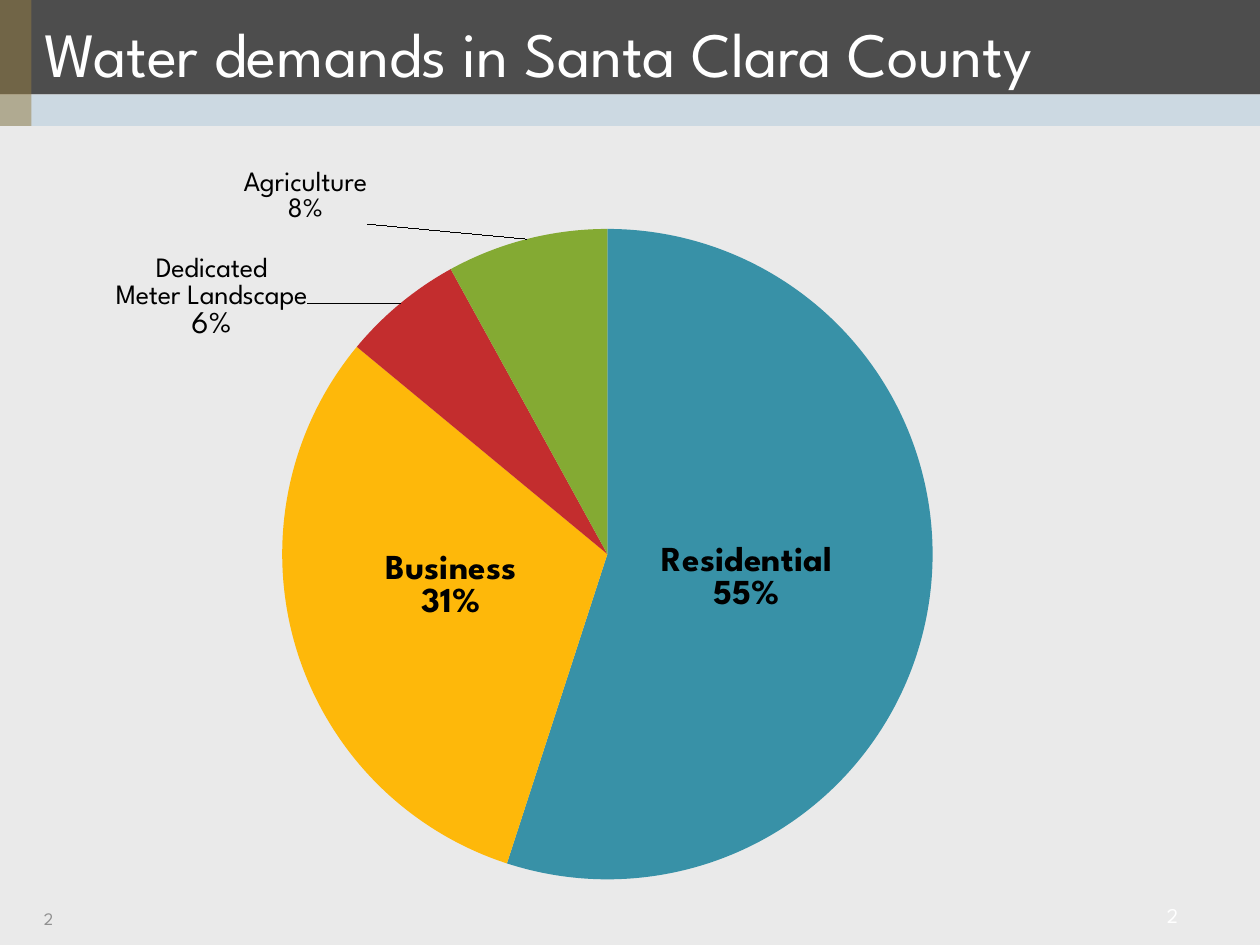
from lxml.etree import SubElement
from pptx import Presentation
from pptx.chart.data import CategoryChartData
from pptx.dml.color import RGBColor
from pptx.enum.chart import XL_CHART_TYPE, XL_LABEL_POSITION
from pptx.enum.shapes import MSO_SHAPE
from pptx.enum.text import MSO_ANCHOR, PP_ALIGN
from pptx.oxml import parse_xml
from pptx.oxml.ns import nsdecls, qn
from pptx.util import Inches, Pt

CELL = 0.25  # grid of 40 columns by 30 rows
# category, value, colour, custom label lines with sizes, label shift
SLICES = [
    ("Residential", 55, "3891A7", None, (-0.016, 0)),
    ("Business", 31, "FEB80A", None, (0, -0.015)),
    ("Landscape", 6, "C32D2E",
     [("Dedicated", 16), ("Meter Landscape", 16), ("6%", 18)], (-0.067, 0.053)),
    ("Agriculture", 8, "84AA33",
     [("Agriculture", 16), ("8%", 16)], (-0.12, -0.01)),
]


def colour(value):
    return RGBColor.from_string(value)


def cells(*lengths):
    return [Inches(length * CELL) for length in lengths]


def manual_layout(x, y, w=None, h=None):
    """Manual layout: a shift for labels, an inner frame when sized."""
    parts = [("x", x), ("y", y)]
    if w is not None:
        parts = [("layoutTarget", "inner"), ("xMode", "edge"), ("yMode", "edge"),
                 *parts, ("w", w), ("h", h)]
    inner = "".join(f'<c:{tag} val="{value}"/>' for tag, value in parts)
    return parse_xml(f'<c:layout {nsdecls("c")}><c:manualLayout>{inner}'
                     '</c:manualLayout></c:layout>')


class SlideBuilder:
    face = "League Spartan"

    def __init__(self, page):
        self.page = page

    def style(self, font, size, shade, bold=False):
        font.name, font.size, font.bold = self.face, Pt(size), bold
        font.color.rgb = colour(shade)

    def band(self, area, fill, alpha=None):
        shape = self.page.shapes.add_shape(MSO_SHAPE.RECTANGLE, *cells(*area))
        shape.shadow.inherit = False
        shape.line.fill.background()
        shape.fill.solid()
        shape.fill.fore_color.rgb = colour(fill)
        if alpha is not None:
            tint = shape.element.spPr.find(".//" + qn("a:srgbClr"))
            SubElement(tint, qn("a:alpha"), val=str(alpha * 1000))

    def set_text(self, box, text, size, shade, align=PP_ALIGN.LEFT):
        frame = box.text_frame
        frame.word_wrap = True
        frame.vertical_anchor = MSO_ANCHOR.MIDDLE
        para = frame.paragraphs[0]
        para.text, para.alignment = text, align
        self.style(para.font, size, shade)

    def title(self, area, text):
        box = self.page.shapes.title
        box.left, box.top, box.width, box.height = cells(*area)
        self.set_text(box, text, 36, "FFFFFF")
        box.element.getparent().append(box.element)  # in front of the bands

    def text(self, area, *args):
        self.set_text(self.page.shapes.add_textbox(*cells(*area)), *args)

    def label(self, point, lines):
        """Put category and share inside a slice, or custom lines outside it."""
        label = point.data_label
        if lines:
            frame = label.text_frame
            for number, (line, size) in enumerate(lines):
                para = frame.add_paragraph() if number else frame.paragraphs[0]
                span = para.add_run()
                span.text = line
                self.style(span.font, size, "000000")
            label.position = XL_LABEL_POSITION.OUTSIDE_END
        else:
            self.style(label.font, 20, "000000", bold=True)
            label.position = XL_LABEL_POSITION.CENTER

    def pie(self, area, slices, frame):
        data = CategoryChartData()
        data.categories = [entry[0] for entry in slices]
        data.add_series("Series 1", [entry[1] for entry in slices])
        chart = self.page.shapes.add_chart(
            XL_CHART_TYPE.PIE, *cells(*area), data).chart
        chart.has_legend = chart.has_title = False
        self.style(chart.font, 10, "000000")
        plot = chart.plots[0]
        plot.vary_by_categories = True
        series = plot.series[0]

        # Labels shared by the series
        labels = series.data_labels
        self.style(labels.font, 20, "000000", bold=True)
        labels.number_format, labels.number_format_is_linked = "0%", False
        labels.show_value = False
        labels.show_category_name = labels.show_percentage = True

        # Slices and their own labels
        for number, (_, _, fill, lines, _) in enumerate(slices):
            point = series.points[number]
            point.format.fill.solid()
            point.format.fill.fore_color.rgb = colour(fill)
            self.label(point, lines)
        root = chart.element
        for node, entry in zip(root.iter(qn("c:dLbl")), slices):
            for old in node.findall(qn("c:layout")):
                node.remove(old)
            node.find(qn("c:idx")).addnext(manual_layout(*entry[4]))
            for tag, shown in (("showVal", 0), ("showCatName", 1), ("showPercent", 1)):
                node.find(qn("c:" + tag)).set("val", str(shown))
            SubElement(node, qn("c:separator")).text = "\n"
        group = next(root.iter(qn("c:dLbls")))
        for old in group.findall(qn("c:showLeaderLines")):
            group.remove(old)
        SubElement(group, qn("c:showLeaderLines"), val="1")

        # Fixed frame of the pie
        area_node = next(root.iter(qn("c:plotArea")))
        for old in area_node.findall(qn("c:layout")):
            area_node.remove(old)
        area_node.insert(0, manual_layout(*frame))


def main():
    deck = Presentation()
    deck.slide_width, deck.slide_height = cells(40, 30)
    page = deck.slides.add_slide(deck.slide_layouts[5])
    page.background.fill.solid()
    page.background.fill.fore_color.rgb = colour("EAEAEA")
    builder = SlideBuilder(page)

    # Header
    builder.band((0, 0, 40, 3), "4D4D4D")
    builder.band((0, 3, 40, 1), "CCD9E2")
    builder.band((0, 0, 1, 4), "967D42", alpha=50)
    builder.title((1, 0, 39.32, 3.32), "Water demands in Santa Clara County")

    # Pie chart
    builder.pie((-1.68, 4.32, 41.68, 25), SLICES, (0.255, 0.118, 0.496, 0.826))

    # Page numbers
    builder.text((1, 28.36, 5.32, 1.6), "2", 10, "909090")
    builder.text((33.8, 28.24, 4, 1.6), "2", 12, "FFFFFF", PP_ALIGN.RIGHT)

    deck.save("out.pptx")


if __name__ == "__main__":
    main()
